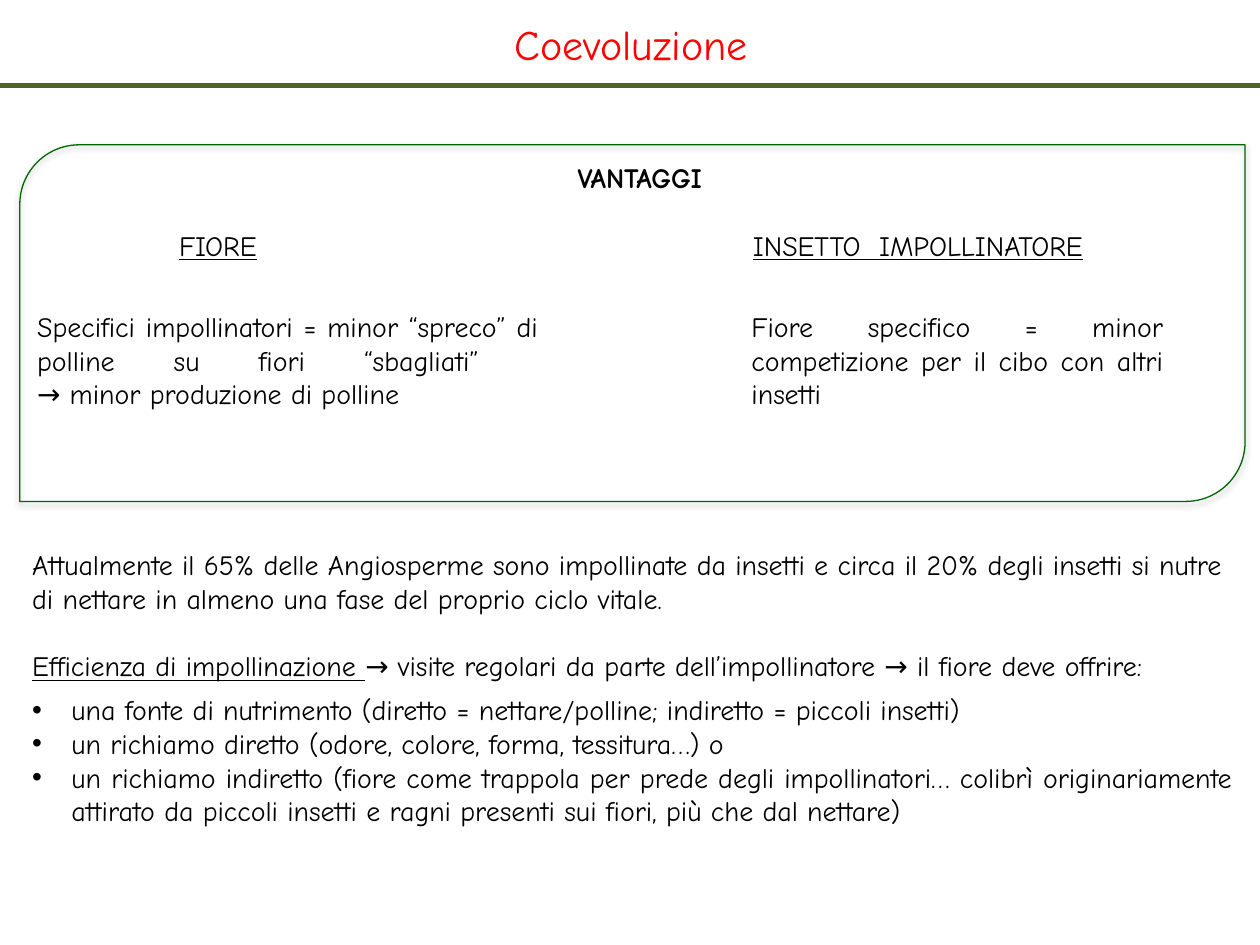
from dataclasses import dataclass

from lxml import etree
from pptx import Presentation
from pptx import util as u
from pptx.dml.color import RGBColor
from pptx.enum import shapes, text
from pptx.oxml import ns


@dataclass(frozen=True)
class Theme:
    font: str = "Comic Neue"
    title_size: int = 24
    body_size: int = 16
    line_gap: float = 19.3
    title: RGBColor = RGBColor(0xFF, 0x00, 0x00)
    ink: RGBColor = RGBColor(0x00, 0x00, 0x00)
    frame: RGBColor = RGBColor(0x00, 0x66, 0x00)
    rule: RGBColor = RGBColor(0x4F, 0x62, 0x28)


THEME = Theme()
ALIGN = text.PP_ALIGN
BULLETS = [
    "una fonte di nutrimento (diretto = nettare/polline; indiretto = piccoli insetti)",
    "un richiamo diretto (odore, colore, forma, tessitura…) o",
    "un richiamo indiretto (fiore come trappola per prede degli impollinatori… colibrì "
    "originariamente attirato da piccoli insetti e ragni presenti sui fiori, più che dal nettare)",
]


def add_xml(parent, tag, **attributes):
    return etree.SubElement(parent, ns.qn(tag), attributes)


def format_run(run, size=THEME.body_size, color=THEME.ink, bold=False, underline=False):
    run.font.name = THEME.font
    run.font.size = u.Pt(size)
    run.font.color.rgb = color
    run.font.bold = bold
    run.font.underline = underline


def add_title(slide, words):
    title = slide.shapes.title
    title.left, title.top, title.width, title.height = u.Cm(3.35), u.Cm(0.25), u.Cm(18.75), u.Cm(1.28)
    frame = title.text_frame
    frame.text = words
    frame.auto_size = text.MSO_AUTO_SIZE.NONE
    frame.vertical_anchor = text.MSO_ANCHOR.TOP
    paragraph = frame.paragraphs[0]
    paragraph.alignment = ALIGN.CENTER
    format_run(paragraph.runs[0], THEME.title_size, THEME.title)


def add_rule(slide, top, width):
    line = slide.shapes.add_connector(shapes.MSO_CONNECTOR.STRAIGHT, 0, u.Cm(top), width, u.Cm(top))
    line.line.color.rgb = THEME.rule
    line.line.width = u.Pt(3)
    add_xml(line._element.spPr, "a:effectLst")


def add_frame(slide, left, top, width, height):
    shape = slide.shapes.add_shape(
        shapes.MSO_SHAPE.ROUND_2_DIAG_RECTANGLE, u.Cm(left), u.Cm(top), u.Cm(width), u.Cm(height))
    shape.fill.background()
    shape.line.color.rgb = THEME.frame
    shape.line.width = u.Pt(0.75)
    shape.shadow.inherit = False
    effects = shape._element.spPr.find(ns.qn("a:effectLst"))
    shadow = add_xml(effects, "a:outerShdw", blurRad=str(u.Pt(3.1)), dist=str(u.Pt(1.8)),
                     dir="5400000", rotWithShape="0")
    color = add_xml(shadow, "a:srgbClr", val=str(THEME.ink))
    add_xml(color, "a:alpha", val="35000")


def add_text_box(slide, left, top, width, height):
    box = slide.shapes.add_textbox(u.Cm(left), u.Cm(top), u.Cm(width), u.Cm(height))
    box.text_frame.word_wrap = True
    return box.text_frame


def write(paragraph, words, align=ALIGN.LEFT, **style):
    paragraph.text = words
    paragraph.alignment = align
    for run in paragraph.runs:
        format_run(run, **style)


def write_parts(paragraph, parts):
    for words, underline in parts:
        run = paragraph.add_run()
        run.text = words
        format_run(run, underline=underline)


def set_tabs(paragraph, positions):
    tabs = add_xml(paragraph._p.get_or_add_pPr(), "a:tabLst")
    for position in positions:
        add_xml(tabs, "a:tab", pos=str(u.Cm(position)), algn="l")


def set_bullet(paragraph, indent):
    properties = paragraph._p.get_or_add_pPr()
    properties.set("marL", str(u.Cm(indent)))
    properties.set("indent", str(-u.Cm(indent)))
    add_xml(properties, "a:buFont", typeface="Arial")
    add_xml(properties, "a:buChar", char="•")


def add_headings(slide):
    frame = add_text_box(slide, 1.3, 3.12, 23.2, 2.31)
    write(frame.paragraphs[0], "VANTAGGI", ALIGN.CENTER, bold=True)
    columns = frame.add_paragraph()
    set_tabs(columns, (2.06, 13.63))
    columns.space_before = u.Pt(THEME.line_gap)
    write_parts(columns, [("\t", False), ("FIORE", True), ("\t", False),
                          ("INSETTO  IMPOLLINATORE", True)])


def add_advantage(slide, left, width, words):
    frame = add_text_box(slide, left, 6.12, width, 2.31)
    write(frame.paragraphs[0], words, ALIGN.JUSTIFY)


def add_discussion(slide):
    frame = add_text_box(slide, 0.4, 10.92, 24.7, 6.63)
    write(frame.paragraphs[0],
          "Attualmente il 65% delle Angiosperme sono impollinate da insetti e circa il 20% degli "
          "insetti si nutre di nettare in almeno una fase del proprio ciclo vitale.")
    efficiency = frame.add_paragraph()
    efficiency.alignment = ALIGN.JUSTIFY
    efficiency.space_before = u.Pt(THEME.line_gap)
    efficiency.space_after = u.Pt(6)
    write_parts(efficiency, [
        ("Efficienza di impollinazione ", True),
        ("→ visite regolari da parte dell’impollinatore → il fiore deve offrire:", False)])
    for words in BULLETS:
        bullet = frame.add_paragraph()
        set_bullet(bullet, 0.79)
        write(bullet, words, ALIGN.JUSTIFY)


def main():
    presentation = Presentation()
    presentation.slide_width, presentation.slide_height = u.Cm(25.4), u.Cm(19.05)
    slide = presentation.slides.add_slide(presentation.slide_layouts[5])
    add_title(slide, "Coevoluzione")
    add_rule(slide, 1.73, presentation.slide_width)
    add_frame(slide, 0.4, 2.92, 24.7, 7.19)
    add_headings(slide)
    add_advantage(slide, 0.5, 10.6,
                  "Specifici impollinatori = minor “spreco” di polline su fiori “sbagliati” "
                  "\v→ minor produzione di polline")
    add_advantage(slide, 14.9, 8.8,
                  "Fiore specifico = minor competizione per il cibo con altri insetti")
    add_discussion(slide)
    presentation.save("out.pptx")


if __name__ == "__main__":
    main()
